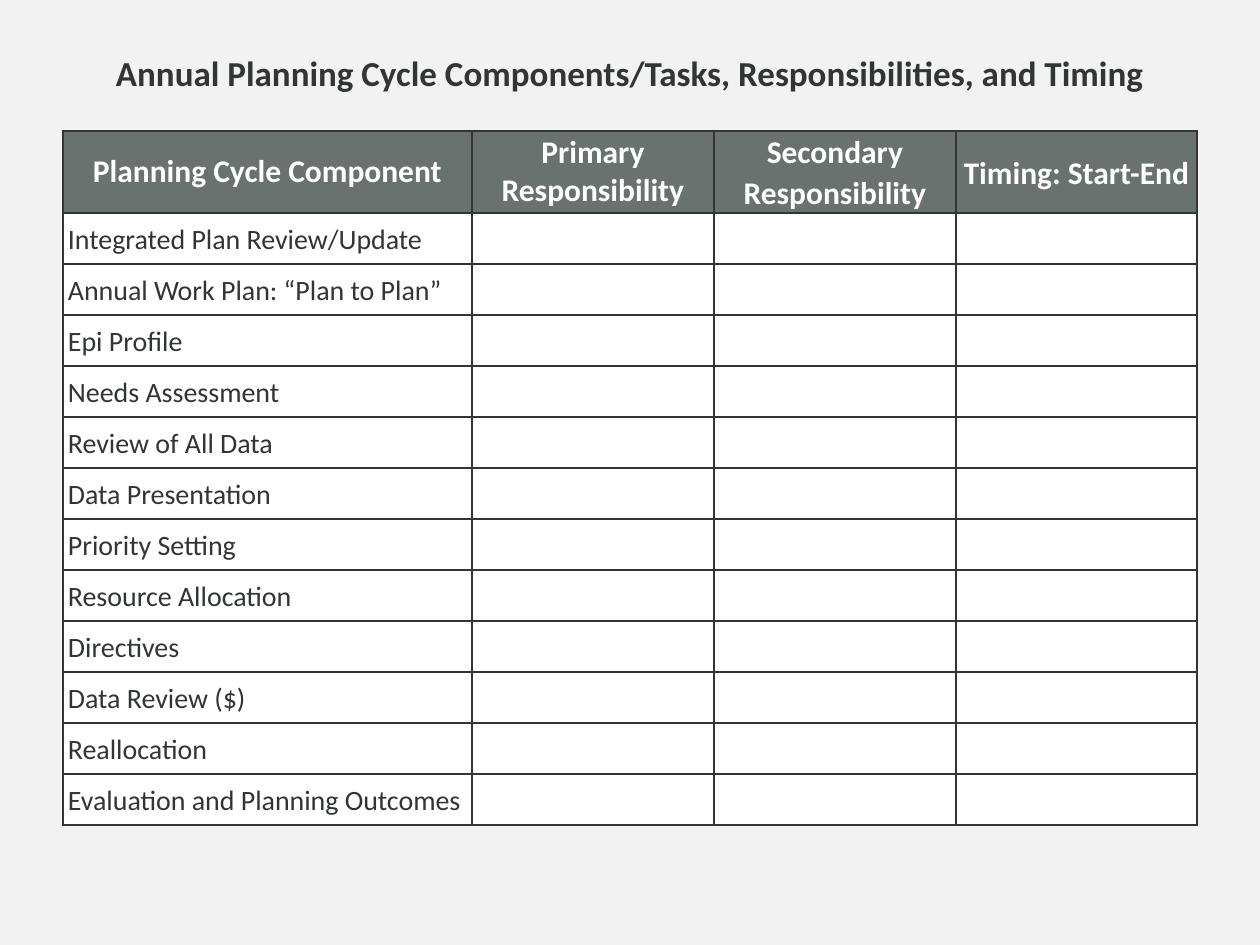
from pptx import Presentation
from pptx.dml.color import RGBColor
from pptx.enum.text import MSO_ANCHOR, PP_ALIGN
from pptx.oxml import parse_xml
from pptx.oxml.ns import nsdecls
from pptx.util import Emu, Pt

PX = 914400 // 126
INK, WHITE, SLATE, PAPER = "313534", "FFFFFF", "69726F", "F2F2F2"
TITLE = "Annual Planning Cycle Components/Tasks, Responsibilities, and Timing"
HEADINGS = [
    "Planning Cycle Component",
    "Primary Responsibility",
    "Secondary Responsibility",
    "Timing: Start-End",
]
COMPONENTS = [
    "Integrated Plan Review/Update",
    "Annual Work Plan: “Plan to Plan”",
    "Epi Profile",
    "Needs Assessment",
    "Review of All Data",
    "Data Presentation",
    "Priority Setting",
    "Resource Allocation",
    "Directives",
    "Data Review ($)",
    "Reallocation",
    "Evaluation and Planning Outcomes",
]
COLUMN_WIDTHS = [409, 242, 242, 241]
HEADER_HEIGHT, ROW_HEIGHT = 82, 51


def px(length):
    return Emu(length * PX)


def color(hex_string):
    return RGBColor.from_string(hex_string)


def style_paragraph(paragraph, size, ink, bold=False, align=PP_ALIGN.LEFT):
    paragraph.alignment = align
    font = paragraph.font
    font.name, font.size, font.bold = "Calibri", Pt(size), bold
    font.color.rgb = color(ink)


def add_title(slide):
    title = slide.shapes.add_textbox(px(63), px(38), px(1134), px(69))
    frame = title.text_frame
    frame.word_wrap = True
    frame.vertical_anchor = MSO_ANCHOR.MIDDLE
    frame.text = TITLE
    style_paragraph(frame.paragraphs[0], 20, INK, True, PP_ALIGN.CENTER)


def add_borders(cell):
    properties = cell._tc.get_or_add_tcPr()
    for side in "LRTB":
        properties.append(parse_xml(
            f'<a:ln{side} {nsdecls("a")} w="{Pt(1)}"><a:solidFill>'
            f'<a:srgbClr val="{INK}"/></a:solidFill></a:ln{side}>'))


def fill_cell(cell, text, fill, line_spacing, **text_style):
    cell.margin_left = cell.margin_right = px(5)
    cell.margin_top = cell.margin_bottom = 0
    cell.vertical_anchor = MSO_ANCHOR.MIDDLE
    add_borders(cell)
    cell.fill.solid()
    cell.fill.fore_color.rgb = color(fill)
    cell.text = text
    paragraph = cell.text_frame.paragraphs[0]
    paragraph.line_spacing = line_spacing
    paragraph.space_after = Pt(0.2)
    style_paragraph(paragraph, **text_style)


def add_planning_table(slide):
    height = HEADER_HEIGHT + ROW_HEIGHT * len(COMPONENTS)
    table = slide.shapes.add_table(
        len(COMPONENTS) + 1, len(HEADINGS),
        px(63), px(131), px(sum(COLUMN_WIDTHS)), px(height)).table
    for column, width in zip(table.columns, COLUMN_WIDTHS):
        column.width = px(width)
    for row in table.rows:
        row.height = px(ROW_HEIGHT)
    table.rows[0].height = px(HEADER_HEIGHT)

    for index, heading in enumerate(HEADINGS):
        fill_cell(table.cell(0, index), heading, SLATE, 1.0 if index < 2 else 1.07,
                  size=18, ink=WHITE, bold=True, align=PP_ALIGN.CENTER)
    for row, component in enumerate(COMPONENTS, start=1):
        for column in range(len(HEADINGS)):
            fill_cell(table.cell(row, column), component if column == 0 else "",
                      WHITE, 1.07, size=16, ink=INK)


def main():
    presentation = Presentation()
    presentation.slide_width, presentation.slide_height = px(1260), px(945)
    slide = presentation.slides.add_slide(presentation.slide_layouts[6])
    slide.background.fill.solid()
    slide.background.fill.fore_color.rgb = color(PAPER)
    add_title(slide)
    add_planning_table(slide)
    presentation.save("out.pptx")


if __name__ == "__main__":
    main()
